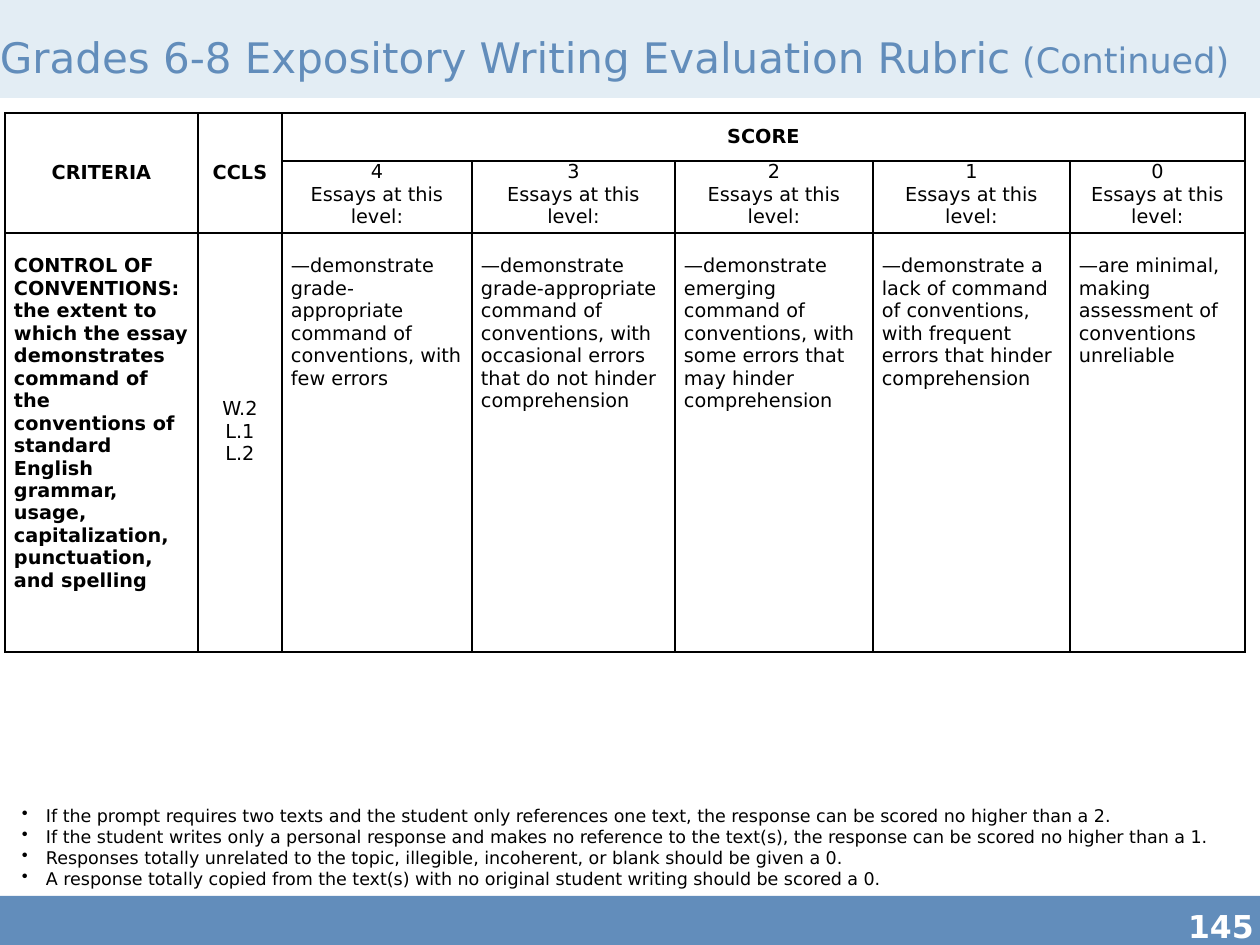
import pptx
import pptx.util
import pptx.dml.color
import pptx.enum.shapes
import pptx.enum.text
import pptx.oxml
import pptx.oxml.ns
from dataclasses import dataclass

ALIGN = pptx.enum.text.PP_ALIGN
ANCHOR = pptx.enum.text.MSO_ANCHOR
PX_PER_INCH = 126


@dataclass(frozen=True)
class Theme:
    font: str = "DejaVu Sans"
    blue: str = "628DBB"
    pale: str = "E3EDF4"
    white: str = "FFFFFF"
    black: str = "000000"
    title_size: int = 24
    suffix_size: int = 20
    number_size: int = 18
    table_size: int = 11
    note_size: int = 10
    border_width: int = 1


THEME = Theme()

COLUMNS = [193, 84, 190, 203, 198, 197, 175]
ROWS = [48, 72, 419]
LINE_HEIGHT = 22  # one line of table text

CRITERION = ("CONTROL OF CONVENTIONS: the extent to which the essay demonstrates "
             "command of the conventions of standard English grammar, usage, "
             "capitalization, punctuation, and spelling")
STANDARDS = ["W.2", "L.1", "L.2"]
LEVELS = {
    "4": "—demonstrate grade-appropriate command of conventions, with few errors",
    "3": "—demonstrate grade-appropriate command of conventions, with occasional "
         "errors that do not hinder comprehension",
    "2": "—demonstrate emerging command of conventions, with some errors that may "
         "hinder comprehension",
    "1": "—demonstrate a lack of command of conventions, with frequent errors that "
         "hinder comprehension",
    "0": "—are minimal, making assessment of conventions unreliable",
}
NOTES = [
    "If the prompt requires two texts and the student only references one text, "
    "the response can be scored no higher than a 2.",
    "If the student writes only a personal response and makes no reference to the "
    "text(s), the response can be scored no higher than a 1.",
    "Responses totally unrelated to the topic, illegible, incoherent, or blank "
    "should be given a 0.",
    "A response totally copied from the text(s) with no original student writing "
    "should be scored a 0.",
]


def px(length):
    return pptx.util.Emu(round(length * pptx.util.Inches(1) / PX_PER_INCH))


def rgb(value):
    return pptx.dml.color.RGBColor.from_string(value)


def set_values(target, values):
    for name, value in values.items():
        setattr(target, name, value)


def set_margins(target, left, top, right, bottom):
    set_values(target, {"margin_left": px(left), "margin_top": px(top),
                        "margin_right": px(right), "margin_bottom": px(bottom)})


def add_span(para, text, size, color=THEME.black, bold=False):
    span = para.add_run()
    span.text = text
    set_values(span.font, {"name": THEME.font, "size": pptx.util.Pt(size), "bold": bold})
    span.font.color.rgb = rgb(color)


def write_lines(frame, lines, size, align=ALIGN.LEFT, bold=False):
    for index, line in enumerate(lines):
        para = frame.add_paragraph() if index else frame.paragraphs[0]
        para.alignment = align
        add_span(para, line, size, bold=bold)


def add_band(page, left, top, width, height, color):
    band = page.shapes.add_shape(pptx.enum.shapes.MSO_SHAPE.RECTANGLE,
                                 px(left), px(top), px(width), px(height))
    band.shadow.inherit = False
    band.fill.solid()
    band.fill.fore_color.rgb = rgb(color)
    band.line.fill.background()


def add_box(page, left, top, width, height, margins, anchor=ANCHOR.TOP):
    box = page.shapes.add_textbox(px(left), px(top), px(width), px(height))
    set_values(box.text_frame, {"word_wrap": True, "vertical_anchor": anchor})
    set_margins(box.text_frame, *margins)
    return box.text_frame


def add_bullet(para, indent):
    properties = para._p.get_or_add_pPr()
    properties.set("marL", str(px(indent)))
    properties.set("indent", str(px(-indent)))
    bullet = pptx.oxml.parse_xml(
        f'<a:buChar {pptx.oxml.ns.nsdecls("a")} char="•"/>')
    properties.append(bullet)


def add_borders(cell):
    properties = cell._tc.get_or_add_tcPr()
    for position, side in enumerate(("lnL", "lnR", "lnT", "lnB")):
        properties.insert(position, pptx.oxml.parse_xml(
            f'<a:{side} {pptx.oxml.ns.nsdecls("a")} '
            f'w="{pptx.util.Pt(THEME.border_width)}"><a:solidFill>'
            f'<a:srgbClr val="{THEME.black}"/></a:solidFill></a:{side}>'))


def fill_cell(cell, lines, margins, anchor=ANCHOR.TOP, align=ALIGN.LEFT, bold=False):
    cell.vertical_anchor = anchor
    set_margins(cell, *margins)
    write_lines(cell.text_frame, lines, THEME.table_size, align, bold)


def add_rubric(page):
    table = page.shapes.add_table(len(ROWS), len(COLUMNS), px(5), px(113),
                                  px(sum(COLUMNS)), px(sum(ROWS))).table
    set_values(table, {"first_row": False, "horz_banding": False})
    for column, width in zip(table.columns, COLUMNS):
        column.width = px(width)
    for row, height in zip(table.rows, ROWS):
        row.height = px(height)
    for cell in table.iter_cells():
        cell.fill.background()
        add_borders(cell)

    # Headings: two span both heading rows, one spans all the levels
    head_margins = (8, 0, 8, 0)
    headings = [("CRITERIA", 0, (1, 0)), ("CCLS", 1, (1, 1)),
                ("SCORE", 2, (0, len(COLUMNS) - 1))]
    for text, column, last in headings:
        cell = table.cell(0, column)
        cell.merge(table.cell(*last))
        fill_cell(cell, [text], head_margins, ANCHOR.MIDDLE, ALIGN.CENTER, True)

    # Criterion and standards
    body_margins = (9, LINE_HEIGHT, 9, 0)
    fill_cell(table.cell(2, 0), [CRITERION], body_margins, bold=True)
    fill_cell(table.cell(2, 1), STANDARDS, (9, 0, 9, LINE_HEIGHT),
              ANCHOR.MIDDLE, ALIGN.CENTER)

    # Score levels
    for column, (score, description) in enumerate(LEVELS.items(), start=2):
        fill_cell(table.cell(1, column), [score, "Essays at this level:"],
                  head_margins, align=ALIGN.CENTER)
        fill_cell(table.cell(2, column), [description], body_margins)


def main():
    deck = pptx.Presentation()
    set_values(deck, {"slide_width": px(1260), "slide_height": px(945)})
    page = deck.slides.add_slide(deck.slide_layouts[6])

    # Background bands
    add_band(page, 0, 896, 1261, 53, THEME.blue)
    add_band(page, 0, 0, 1260, 165, THEME.pale)
    add_band(page, 0, 98, 1260, 108, THEME.white)

    # Title
    title = add_box(page, 0, 29, 1260, 62, (0, 0, 13, 6), ANCHOR.MIDDLE).paragraphs[0]
    add_span(title, "Grades 6-8 Expository Writing Evaluation Rubric",
             THEME.title_size, THEME.blue)
    add_span(title, " (Continued)", THEME.suffix_size, THEME.blue)

    # Page number
    number = add_box(page, 1188, 907, 72, 38, (0, 0, 0, 0)).paragraphs[0]
    add_span(number, "145", THEME.number_size, THEME.white, True)

    add_rubric(page)

    # Scoring notes
    notes = add_box(page, 9, 799, 1240, 97, (13, 6, 13, 6))
    write_lines(notes, NOTES, THEME.note_size)
    for para in notes.paragraphs:
        add_bullet(para, 24)

    deck.save("out.pptx")


if __name__ == "__main__":
    main()
